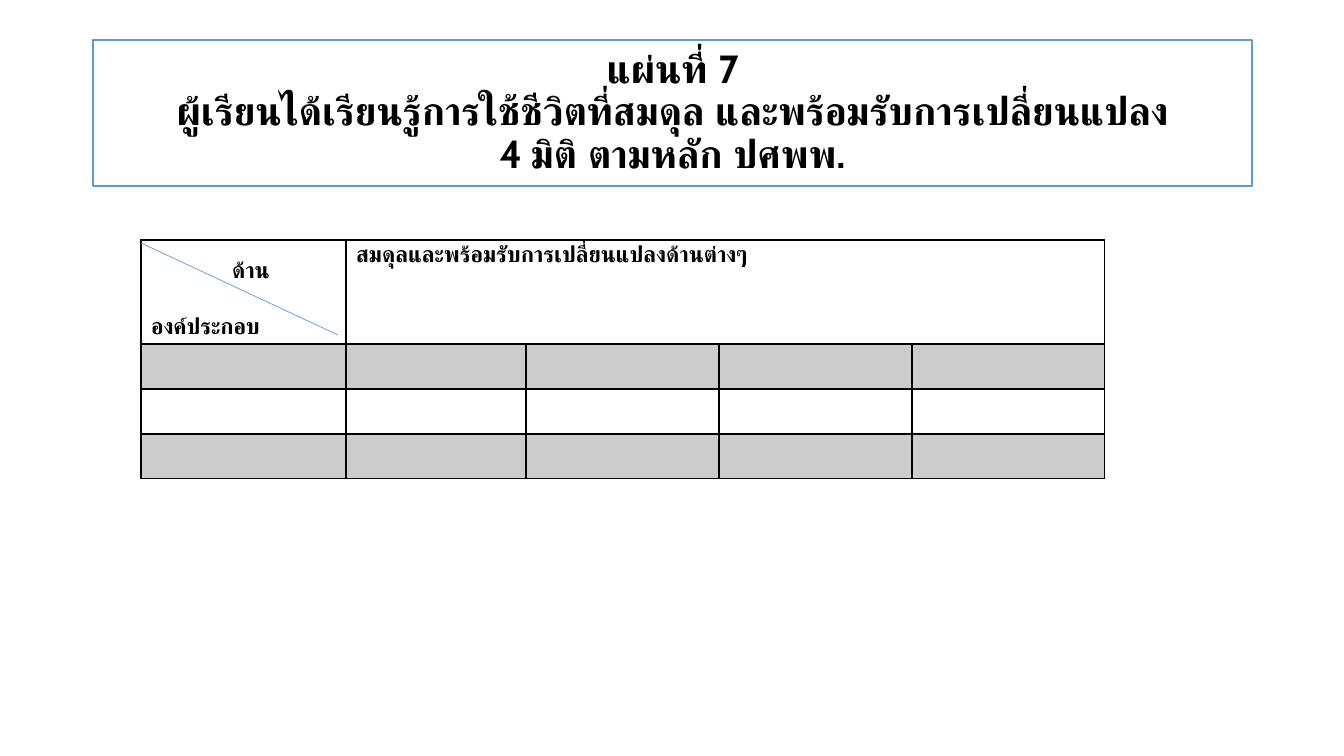
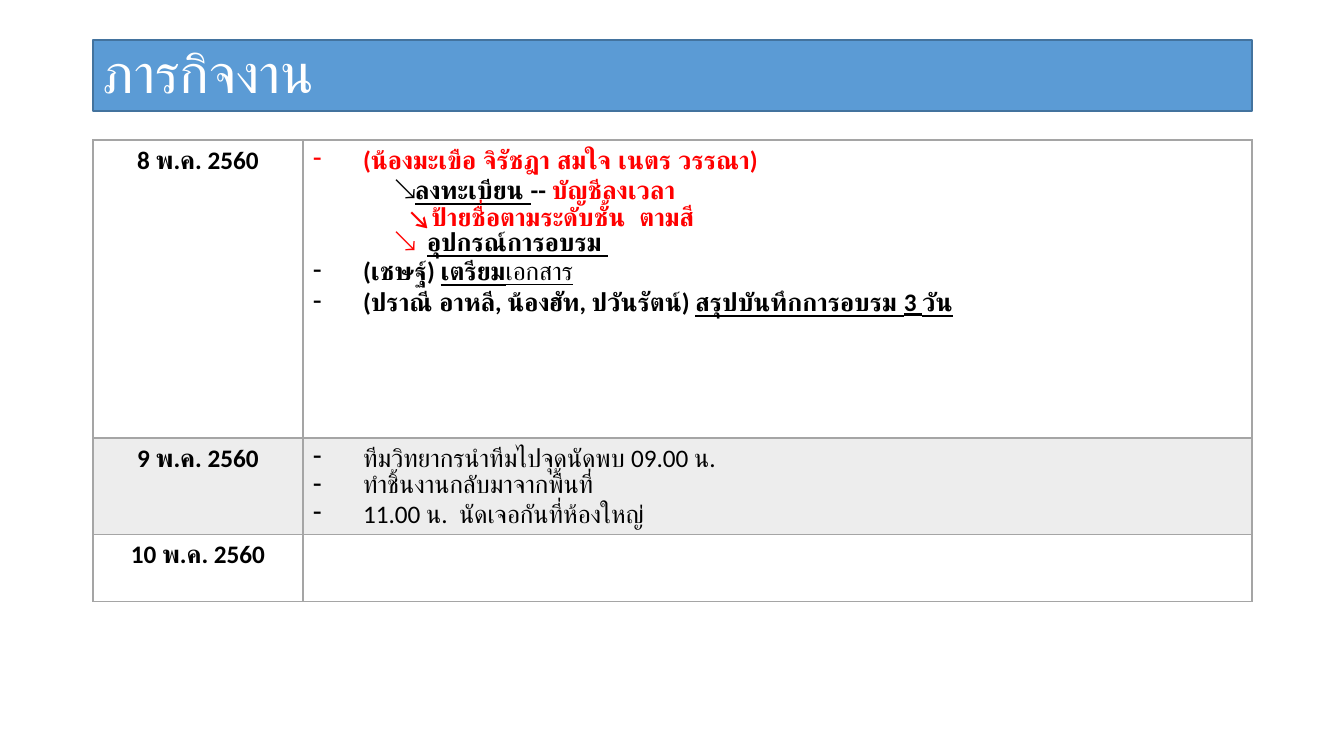
"""Build two training slides: a balance table and a task schedule."""
from pptx import Presentation
from pptx.dml.color import RGBColor
from pptx.enum.shapes import MSO_CONNECTOR, MSO_SHAPE
from pptx.enum.text import MSO_ANCHOR, PP_ALIGN
from pptx.oxml.ns import qn
from pptx.util import Emu, Pt
from lxml import etree

RECT, STRAIGHT = MSO_SHAPE.RECTANGLE, MSO_CONNECTOR.STRAIGHT
TOP, MIDDLE, BOTTOM = MSO_ANCHOR.TOP, MSO_ANCHOR.MIDDLE, MSO_ANCHOR.BOTTOM
LEFT, CENTER = PP_ALIGN.LEFT, PP_ALIGN.CENTER

THEME = {
    "white": "FFFFFF", "black": "000000", "red": "FF0000", "gray": "A5A5A5",
    "blue": "5B9BD5", "navy": "43739E",
    "heading": ("Cabin", 28), "label": ("Cabin", 16),
    "banner": ("Calibri", 39.6), "body": ("Calibri", 18),
    "tint": 20, "thin": 0.5, "rule": 1, "thick": 2,
}
SLIDE_W, SLIDE_H = 1344, 756
TITLE_X, TITLE_Y, TITLE_W = 93, 40, 1159
HANG = 50

BALANCE_TITLE = [
    "แผ่นที่ 7",
    "ผู้เรียนได้เรียนรู้การใช้ชีวิตที่สมดุล และพร้อมรับการเปลี่ยนแปลง",
    "4 มิติ ตามหลัก ปศพพ.",
]
BALANCE = {"x": 141, "y": 240, "cols": [205, 180, 193, 193, 193],
           "rows": [104, 45, 45, 45], "tinted": {1, 3}, "color": "black"}
CORNER = [
    {"runs": [("ด้าน", "b")], "margin": 81, "after": 24},
    {"runs": [("องค์ประกอบ", "b")], "after": 24},
]
ASPECTS = [{"runs": [("สมดุลและพร้อมรับการเปลี่ยนแปลงด้านต่างๆ", "b")]}]
DIAGONAL = (141, 243, 338, 335)

TASKS_TITLE = ["ภารกิจงาน"]
TASKS = {"x": 93, "y": 140, "cols": [210, 949], "rows": [298, 96, 67],
         "tinted": {1}, "color": "gray"}
SCHEDULE = [
    ("8 พ.ค. 2560", [
        {"runs": [("(น้องมะเขือ จิรัชฎา สมใจ เนตร วรรณา)", "b", "red")], "dash": True},
        {"runs": [("↘", ""), ("ลงทะเบียน ", "bu"), ("-- ", "b"),
                  ("บัญชีลงเวลา", "b", "red")], "margin": 82},
        {"runs": [("↘ป้ายชื่อตามระดับชั้น  ตามสี", "b", "red")], "margin": 94},
        {"runs": [("↘\t", "", "red"), ("อุปกรณ์การอบรม ", "bu")],
         "margin": 114, "indent": -32},
        {"runs": [("(เชษฐ์) ", "b"), ("เตรียม", "bu"), ("เอกสาร", "u")], "dash": True},
        {"runs": [("(ปราณี อาหลี, น้องฮัท, ปวันรัตน์) ", "b"),
                  ("สรุปบันทึกการอบรม 3 วัน", "bu")], "dash": True},
    ]),
    ("9 พ.ค. 2560", [
        {"runs": [(text, "")], "dash": True} for text in (
            "ทีมวิทยากรนำทีมไปจุดนัดพบ 09.00 น.",
            "ทำชิ้นงานกลับมาจากพื้นที่",
            "11.00 น.  นัดเจอกันที่ห้องใหญ่")
    ]),
    ("10 พ.ค. 2560", []),
]


def px(n):
    return Emu(round(n * 914400 / 100.8))


def rgb(name):
    return RGBColor.from_string(THEME[name])


def add_run(p, text, marks, color, style):
    r = p.add_run()
    r.text = text
    r.font.name, size = THEME[style]
    r.font.size = Pt(size)
    r.font.bold = "b" in marks
    r.font.underline = "u" in marks
    r.font.color.rgb = rgb(color)


def write(tf, paragraphs, style, align=LEFT):
    for i, item in enumerate(paragraphs):
        p = tf.add_paragraph() if i else tf.paragraphs[0]
        p.alignment = align
        p.space_after = Pt(item.get("after", 0))
        dash = item.get("dash", False)
        margin = HANG if dash else item.get("margin", 0)
        indent = -HANG if dash else item.get("indent", 0)
        pPr = p._p.get_or_add_pPr()
        pPr.set("marL", str(px(margin)))
        pPr.set("indent", str(px(indent)))
        if dash:
            etree.SubElement(pPr, qn("a:buChar")).set("char", "-")
        for text, marks, *color in item["runs"]:
            add_run(p, text, marks, color[0] if color else "black", style)


def add_title(s, lines, height, fill, line, style, marks, color, align):
    sp = s.shapes.add_shape(RECT, px(TITLE_X), px(TITLE_Y), px(TITLE_W), px(height))
    sp.shadow.inherit = False
    sp.fill.solid()
    sp.fill.fore_color.rgb = rgb(fill)
    sp.line.color.rgb = rgb(line)
    sp.line.width = Pt(THEME["rule"])
    tf = sp.text_frame
    tf.word_wrap = True
    tf.vertical_anchor = MIDDLE
    p = tf.paragraphs[0]
    p.alignment = align
    p.line_spacing = 0.9
    for i, text in enumerate(lines):
        if i:
            p.add_line_break()
        add_run(p, text, marks, color, style)


def fill_cell(cell, tinted, color):
    cell.fill.solid()
    cell.fill.fore_color.rgb = rgb(color if tinted else "white")
    if tinted:
        clr = cell._tc.tcPr.find(".//" + qn("a:srgbClr"))
        etree.SubElement(clr, qn("a:alpha")).set("val", str(THEME["tint"] * 1000))


def border_cell(cell, color, widths):
    tcPr = cell._tc.get_or_add_tcPr()
    for i, (side, width) in enumerate(widths.items()):
        ln = etree.Element(qn("a:ln" + side), w=str(Pt(width)))
        fill = etree.SubElement(ln, qn("a:solidFill"))
        etree.SubElement(fill, qn("a:srgbClr")).set("val", THEME[color])
        tcPr.insert(i, ln)


def add_grid(s, grid):
    cols, rows = grid["cols"], grid["rows"]
    table = s.shapes.add_table(len(rows), len(cols), px(grid["x"]), px(grid["y"]),
                               px(sum(cols)), px(sum(rows))).table
    table.first_row = table.horz_banding = False
    for col, width in zip(table.columns, cols):
        col.width = px(width)
    for i, (row, height) in enumerate(zip(table.rows, rows)):
        row.height = px(height)
        widths = dict.fromkeys("LRTB", THEME["rule"])
        if i < 2:
            widths["B" if i == 0 else "T"] = THEME["thick"]
        for cell in row.cells:
            fill_cell(cell, i in grid["tinted"], grid["color"])
            border_cell(cell, grid["color"], widths)
            cell.vertical_anchor = TOP
    return table


def build_balance(s):
    add_title(s, BALANCE_TITLE, 146, "white", "blue", "heading", "b", "black", CENTER)
    table = add_grid(s, BALANCE)
    corner, aspects = table.cell(0, 0), table.cell(0, 1)
    aspects.merge(table.cell(0, len(BALANCE["cols"]) - 1))
    corner.vertical_anchor = BOTTOM
    write(corner.text_frame, CORNER, "label")
    write(aspects.text_frame, ASPECTS, "label")
    line = s.shapes.add_connector(STRAIGHT, *map(px, DIAGONAL))
    line.line.color.rgb = rgb("blue")
    line.line.width = Pt(THEME["thin"])
    etree.SubElement(line._element.spPr, qn("a:effectLst"))


def build_tasks(s):
    add_title(s, TASKS_TITLE, 71, "blue", "navy", "banner", "", "white", LEFT)
    table = add_grid(s, TASKS)
    for i, (date, tasks) in enumerate(SCHEDULE):
        write(table.cell(i, 0).text_frame, [{"runs": [(date, "b")]}], "body", CENTER)
        write(table.cell(i, 1).text_frame, tasks, "body")


def main():
    prs = Presentation()
    prs.slide_width, prs.slide_height = px(SLIDE_W), px(SLIDE_H)
    for build in (build_balance, build_tasks):
        build(prs.slides.add_slide(prs.slide_layouts[6]))
    prs.save("out.pptx")


if __name__ == "__main__":
    main()
